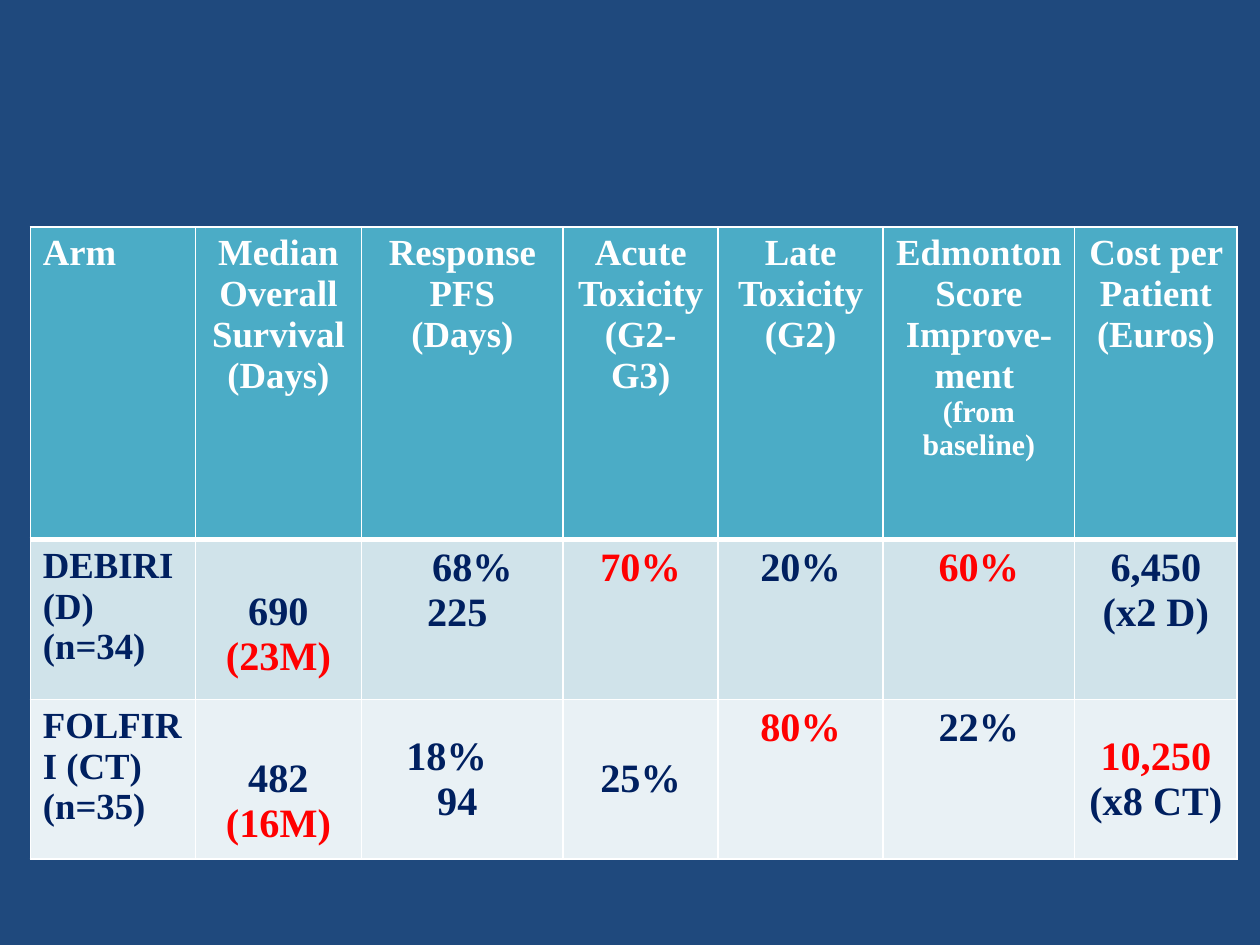
from dataclasses import dataclass

from pptx import Presentation
from pptx.dml.color import RGBColor as Color
from pptx.enum.text import MSO_ANCHOR as Anchor, PP_ALIGN as Align
from pptx.oxml import parse_xml
from pptx.oxml.ns import nsdecls
from pptx.util import Inches, Pt


@dataclass(frozen=True)
class Theme:
    font: str = "Times New Roman"
    background: str = "1F497D"
    header: str = "4BACC6"
    bands: tuple = ("D0E3EA", "E9F1F5")
    white: str = "FFFFFF"
    navy: str = "002060"
    red: str = "FF0000"
    label_size: int = 21
    value_size: int = 23
    note_size: int = 17
    thin: int = 1
    thick: int = 3


THEME = Theme()


@dataclass
class Cell:
    """Paragraphs of (text, format) runs, and how they sit in the cell."""
    paragraphs: list
    align: Align = Align.CENTER
    anchor: Anchor = Anchor.TOP
    left: float = 0.1
    right: float = 0.1
    top: float = 0.05
    first_indent: float = 0
    last_indent: float = 0


def add_text(paragraph, text, color=THEME.navy, size=THEME.value_size):
    run = paragraph.add_run()
    run.text = text
    font = run.font
    font.name, font.size, font.bold = THEME.font, Pt(size), True
    font.color.rgb = Color.from_string(color)


class SlideBuilder:
    def __init__(self, presentation, theme):
        self.theme = theme
        self.width = presentation.slide_width
        self.height = presentation.slide_height
        self.slide = presentation.slides.add_slide(presentation.slide_layouts[6])
        fill = self.slide.background.fill
        fill.solid()
        fill.fore_color.rgb = Color.from_string(theme.background)

    def add_table(self, left, top, columns, rows, content):
        """Position, column widths and row heights are shares of the slide."""
        widths = [int(self.width * share) for share in columns]
        heights = [int(self.height * share) for share in rows]
        table = self.slide.shapes.add_table(
            len(rows), len(columns), int(self.width * left),
            int(self.height * top), sum(widths), sum(heights)).table
        table.horz_banding = False
        for column, width in zip(table.columns, widths):
            column.width = width
        for index, (row, height) in enumerate(zip(table.rows, heights)):
            row.height = height
            for cell, entry in zip(row.cells, content[index]):
                self.add_borders(cell, index)
                self.fill_cell(cell, (self.theme.header, *self.theme.bands)[index])
                self.write_cell(cell, entry)

    def add_borders(self, cell, row):
        # The rule between header and body is the thick one
        thick_side = {0: "B", 1: "T"}.get(row)
        for side in "LRTB":
            points = self.theme.thick if side == thick_side else self.theme.thin
            cell._tc.get_or_add_tcPr().append(parse_xml(
                f'<a:ln{side} {nsdecls("a")} w="{Pt(points)}"><a:solidFill>'
                f'<a:srgbClr val="{self.theme.white}"/></a:solidFill></a:ln{side}>'))

    def fill_cell(self, cell, color):
        cell.fill.solid()
        cell.fill.fore_color.rgb = Color.from_string(color)

    def write_cell(self, cell, entry):
        cell.vertical_anchor = entry.anchor
        cell.margin_left, cell.margin_right = Inches(entry.left), Inches(entry.right)
        cell.margin_top, cell.margin_bottom = Inches(entry.top), Inches(0.05)
        frame = cell.text_frame
        for index, runs in enumerate(entry.paragraphs):
            paragraph = frame.add_paragraph() if index else frame.paragraphs[0]
            paragraph.alignment = entry.align
            indent = entry.last_indent if index else entry.first_indent
            if indent:
                paragraph._p.get_or_add_pPr().set("marL", str(Inches(indent)))
            for text, style in runs:
                add_text(paragraph, text, **style)


HEADING = {"color": THEME.white, "size": THEME.label_size}
NOTE = {"color": THEME.white, "size": THEME.note_size}
LABEL = {"size": THEME.label_size}
VALUE = {}
ALERT = {"color": THEME.red}


def lines(style, *texts, **layout):
    return Cell([[(text, style)] for text in texts], **layout)


def survival(days, months, **layout):
    # The top margin leaves one line free above the figures
    return Cell([[(days, VALUE), (months, ALERT)]], top=0.4, **layout)


HEADER = [
    lines(HEADING, "Arm", align=Align.LEFT),
    lines(HEADING, "Median Overall Survival (Days)"),
    lines(HEADING, "Response PFS (Days)"),
    lines(HEADING, "Acute Toxicity", "(G2-G3)"),
    lines(HEADING, "Late Toxicity (G2)"),
    Cell([[("Edmonton Score Improve-ment ", HEADING)], [("(from baseline)", NOTE)]],
         left=0.04, right=0.04),
    lines(HEADING, "Cost per Patient (Euros)"),
]
DEBIRI = [
    lines(LABEL, "DEBIRI (D)", "(n=34)", align=Align.LEFT),
    survival("690 ", "(23M)"),
    lines(VALUE, "68%", "225", right=0.18, first_indent=0.24),
    lines(ALERT, "70%"),
    lines(VALUE, "20%"),
    lines(ALERT, "60%"),
    lines(VALUE, "6,450", "(x2 D)"),
]
FOLFIRI = [
    lines(LABEL, "FOLFIRI (CT)", "(n=35)", align=Align.LEFT),
    Cell([[("482", VALUE)], [("(16M)", ALERT)]], top=0.4, anchor=Anchor.MIDDLE),
    lines(VALUE, "18%", "94", anchor=Anchor.MIDDLE, right=0.35, last_indent=0.17),
    lines(VALUE, "25%", anchor=Anchor.MIDDLE),
    lines(ALERT, "80%"),
    lines(VALUE, "22%"),
    Cell([[("10,250", ALERT)], [("(x8 CT)", VALUE)]], anchor=Anchor.MIDDLE),
]


def main():
    presentation = Presentation()
    presentation.slide_width, presentation.slide_height = Inches(10), Inches(7.5)
    builder = SlideBuilder(presentation, THEME)

    # Results by treatment arm
    column_inches = (1.31, 1.32, 1.6, 1.23, 1.31, 1.52, 1.29)
    row_inches = (2.48, 1.27, 1.27)
    builder.add_table(
        left=0.024, top=0.24,
        columns=[inches / 10 for inches in column_inches],
        rows=[inches / 7.5 for inches in row_inches],
        content=[HEADER, DEBIRI, FOLFIRI])

    presentation.save("out.pptx")


if __name__ == "__main__":
    main()
